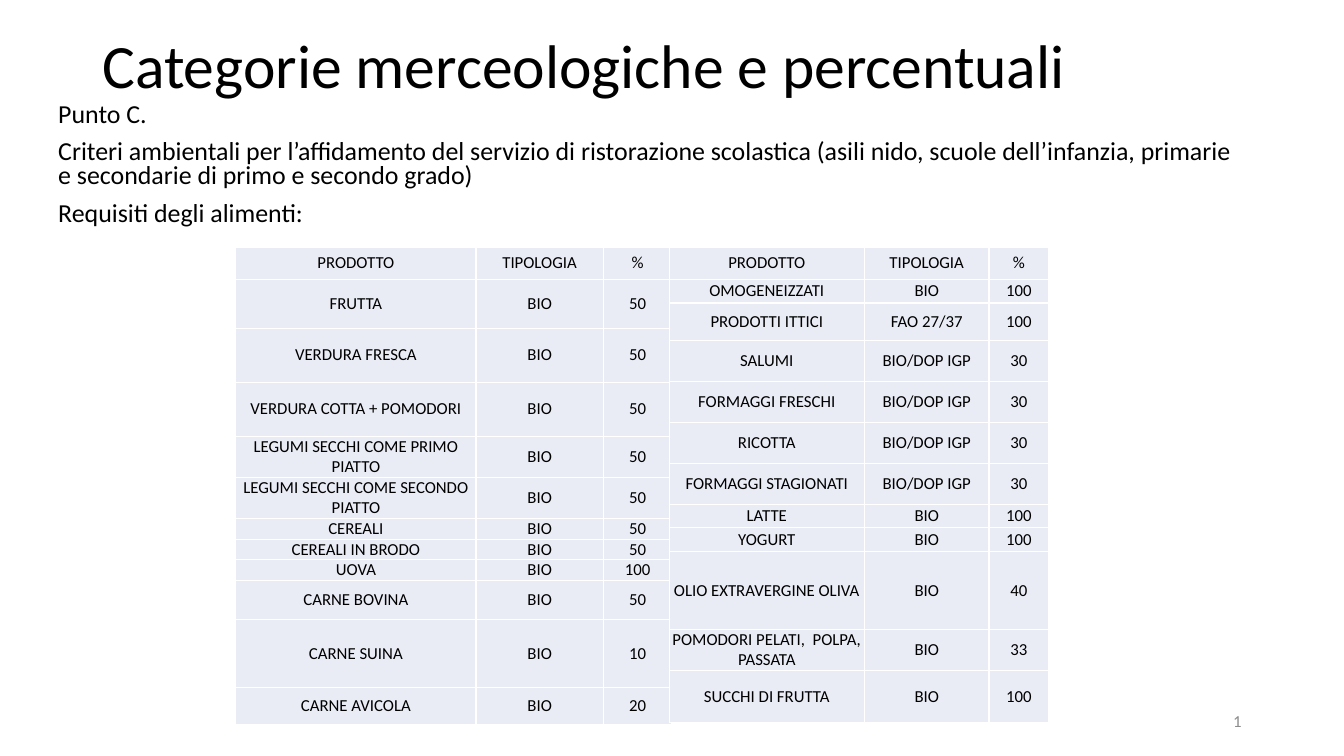
from lxml.etree import SubElement
from pptx import Presentation
from pptx.dml.color import RGBColor
from pptx.enum.text import MSO_ANCHOR as Anchor, PP_ALIGN as Align
from pptx.oxml.ns import qn
from pptx.util import Pt


def color(hex_value):
    return RGBColor.from_string(hex_value)


def write(paragraph, text, size=12, ink="000000", align=Align.LEFT, line=None, before=None):
    """Fill a paragraph with one formatted run."""
    paragraph.alignment = align
    if line:
        paragraph.line_spacing = line
    if before:
        paragraph.space_before = Pt(before)
    run = paragraph.add_run()
    run.text = text
    run.font.name = "Calibri"
    run.font.size = Pt(size)
    run.font.color.rgb = color(ink)


deck = Presentation()
deck.slide_width, deck.slide_height = Pt(960), Pt(540)
slide = deck.slides.add_slide(deck.slide_layouts[6])

page_number = slide.shapes.add_textbox(Pt(678), Pt(500.5), Pt(216), Pt(28.8)).text_frame
page_number.word_wrap = True
page_number.vertical_anchor = Anchor.MIDDLE
write(page_number.paragraphs[0], "1", ink="8C8C8C", align=Align.RIGHT)

intro = slide.shapes.add_textbox(Pt(34.5), Pt(72), Pt(860), Pt(104.4)).text_frame
intro.word_wrap = True
write(intro.paragraphs[0], "Punto C.", size=18.5, line=0.7)
for sentence in (
    "Criteri ambientali per l’affidamento del servizio di ristorazione scolastica "
    "(asili nido, scuole dell’infanzia, primarie e secondarie di primo e secondo grado)",
    "Requisiti degli alimenti:",
):
    write(intro.add_paragraph(), sentence, size=18.5, line=0.8, before=9)

title = slide.shapes.add_textbox(Pt(66), Pt(-3.6), Pt(828), Pt(104.4)).text_frame
title.word_wrap = True
title.vertical_anchor = Anchor.MIDDLE
write(title.paragraphs[0], "Categorie merceologiche e percentuali", size=44, line=0.9)

# Each row: height, product, type, percentage
HEADER = (23, "PRODOTTO", "TIPOLOGIA", "%")
fresh_foods = [
    HEADER,
    (35, "FRUTTA", "BIO", "50"),
    (38.6, "VERDURA FRESCA", "BIO", "50"),
    (38.6, "VERDURA COTTA + POMODORI", "BIO", "50"),
    (29.4, "LEGUMI SECCHI COME PRIMO PIATTO", "BIO", "50"),
    (29.4, "LEGUMI SECCHI COME SECONDO PIATTO", "BIO", "50"),
    (14.8, "CEREALI", "BIO", "50"),
    (14.8, "CEREALI IN BRODO", "BIO", "50"),
    (14.8, "UOVA", "BIO", "100"),
    (28, "CARNE BOVINA", "BIO", "50"),
    (48.5, "CARNE SUINA", "BIO", "10"),
    (26.2, "CARNE AVICOLA", "BIO", "20"),
]
processed_foods = [
    HEADER,
    (17, "OMOGENEIZZATI", "BIO", "100"),
    (26.6, "PRODOTTI ITTICI", "FAO 27/37", "100"),
    (29.3, "SALUMI", "BIO/DOP IGP", "30"),
    (29.3, "FORMAGGI FRESCHI", "BIO/DOP IGP", "30"),
    (29.3, "RICOTTA", "BIO/DOP IGP", "30"),
    (29.3, "FORMAGGI STAGIONATI", "BIO/DOP IGP", "30"),
    (17, "LATTE", "BIO", "100"),
    (17, "YOGURT", "BIO", "100"),
    (55.4, "OLIO EXTRAVERGINE OLIVA", "BIO", "40"),
    (29.3, "POMODORI PELATI,  POLPA, PASSATA", "BIO", "33"),
    (37.3, "SUCCHI DI FRUTTA", "BIO", "100"),
]

for left, widths, foods in (
    (168.5, (171.5, 91, 49), fresh_foods),
    (478, (139.5, 89, 42.5), processed_foods),
):
    total_height = sum(food[0] for food in foods)
    table = slide.shapes.add_table(
        len(foods), len(widths), Pt(left), Pt(176.4), Pt(sum(widths)), Pt(total_height)
    ).table
    table.first_row = table.horz_banding = False
    for column, width in zip(table.columns, widths):
        column.width = Pt(width)
    for row, (height, *texts) in zip(table.rows, foods):
        row.height = Pt(height)
        for cell, text in zip(row.cells, texts):
            cell.margin_left = cell.margin_right = cell.margin_top = cell.margin_bottom = 0
            cell.vertical_anchor = Anchor.MIDDLE
            properties = cell._tc.get_or_add_tcPr()
            for side in ("a:lnL", "a:lnR", "a:lnT", "a:lnB"):
                border = SubElement(properties, qn(side), w=str(Pt(1)))
                SubElement(SubElement(border, qn("a:solidFill")), qn("a:srgbClr"), val="FFFFFF")
            cell.fill.solid()
            cell.fill.fore_color.rgb = color("E9EBF5")
            write(cell.text_frame.paragraphs[0], text, align=Align.CENTER)

deck.save("out.pptx")
